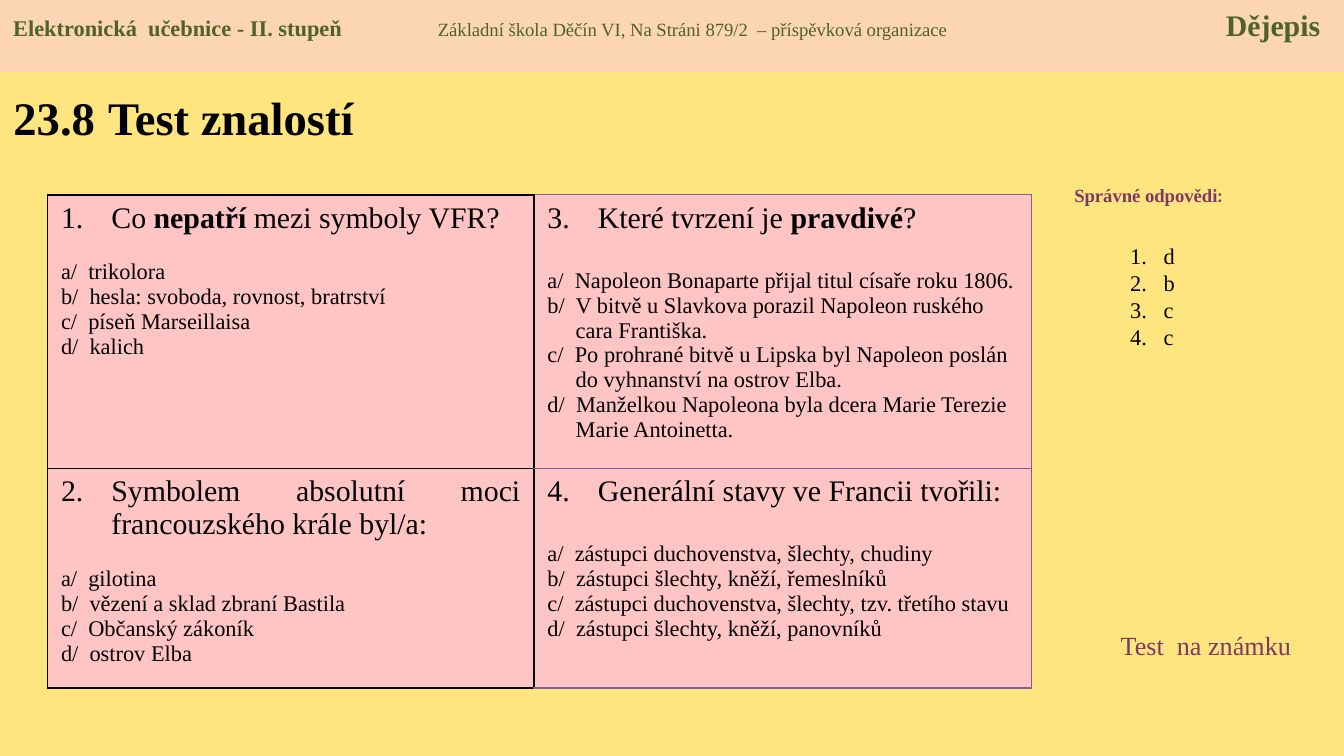
from lxml import etree
from pptx import Presentation
from pptx import util as u
from pptx.dml.color import RGBColor
from pptx.enum import shapes, text
from pptx.oxml.ns import qn

UNIT = u.Inches(0.1)
WIDE, HIGH = 100, 56.25
FACE = "Times New Roman"
BLACK = RGBColor(0, 0, 0)
CREAM = RGBColor(0xFF, 0xE5, 0x7F)
PEACH = RGBColor(0xFC, 0xD5, 0xB5)
GREEN = RGBColor(0x4F, 0x62, 0x28)
PLUM = RGBColor(0x81, 0x37, 0x63)
PINK = RGBColor(0xFF, 0xC5, 0xC5)
VIOLET = RGBColor(0x7D, 0x60, 0xA0)
ALIGN = text.PP_ALIGN

TESTS = [
    [("Co *nepatří* mezi symboly VFR?", 13.5,
      ["a/  trikolora", "b/  hesla: svoboda, rovnost, bratrství",
       "c/  píseň Marseillaisa", "d/  kalich"]),
     ("Které tvrzení je *pravdivé*?", 18,
      ["a/  Napoleon Bonaparte přijal titul císaře roku 1806.",
       "b/  V bitvě u Slavkova porazil Napoleon ruského cara Františka.",
       "c/  Po prohrané bitvě u Lipska byl Napoleon poslán do vyhnanství na ostrov Elba.",
       "d/  Manželkou Napoleona byla dcera Marie Terezie Marie Antoinetta."])],
    [("Symbolem absolutní moci francouzského krále byl/a:", 13.5,
      ["a/  gilotina", "b/  vězení a sklad zbraní Bastila",
       "c/  Občanský zákoník", "d/  ostrov Elba"]),
     ("Generální stavy ve Francii tvořili:", 18,
      ["a/  zástupci duchovenstva, šlechty, chudiny",
       "b/  zástupci šlechty, kněží, řemeslníků",
       "c/  zástupci duchovenstva, šlechty, tzv. třetího stavu",
       "d/  zástupci šlechty, kněží, panovníků"])],
]


def span(*grid):
    """Turn grid units into lengths."""
    return [u.Emu(int(n * UNIT)) for n in grid]


def style(item, **form):
    """Set each attribute of an object from format values."""
    for key, val in form.items():
        setattr(item, key, val)


def write(para, words, size, color=BLACK, bold=False, face=FACE):
    """Add a run with its font."""
    run = para.add_run()
    run.text = words
    style(run.font, size=u.Pt(size), bold=bold, name=face)
    run.font.color.rgb = color


def hang(para, depth):
    """Give a paragraph a hanging indent in grid units."""
    wide = span(depth)[0]
    props = para._p.get_or_add_pPr()
    props.set("marL", str(wide))
    props.set("indent", str(-wide))
    return props


def number(para, depth, start=1):
    """Number a paragraph automatically."""
    mark = etree.SubElement(hang(para, depth), qn("a:buAutoNum"), type="arabicPeriod")
    if start > 1:
        mark.set("startAt", str(start))


def lines(frame, count):
    """Return the given count of paragraphs of a text frame."""
    return [frame.paragraphs[0]] + [frame.add_paragraph() for _ in range(count - 1)]


def label(slide, box):
    """Add a wrapping text box and return its frame."""
    frame = slide.shapes.add_textbox(*span(*box)).text_frame
    frame.word_wrap = True
    return frame


def banner(slide, box):
    """Draw the header band with three tabbed parts."""
    band = slide.shapes.add_shape(shapes.MSO_SHAPE.RECTANGLE, *span(*box))
    band.shadow.inherit = False
    band.fill.solid()
    band.fill.fore_color.rgb = PEACH
    band.line.fill.background()
    band.text_frame.vertical_anchor = text.MSO_ANCHOR.TOP
    para = band.text_frame.paragraphs[0]
    para.alignment = ALIGN.LEFT
    tabs = etree.SubElement(para._p.get_or_add_pPr(), qn("a:tabLst"))
    for stop, side in ((31.6, "l"), (box[2] - 2.75, "r")):
        etree.SubElement(tabs, qn("a:tab"), pos=str(span(stop)[0]), algn=side)
    write(para, "Elektronická  učebnice - II. stupeň\t", 12, GREEN, True)
    write(para, "Základní škola Děčín VI, Na Stráni 879/2  – příspěvková organizace\t", 10, GREEN)
    write(para, "Dějepis", 16, GREEN, True)


def heading(slide, box):
    """Place and format the title."""
    title = slide.shapes.title
    style(title, **dict(zip(("left", "top", "width", "height"), span(*box))))
    style(title.text_frame, vertical_anchor=text.MSO_ANCHOR.MIDDLE, word_wrap=True)
    para = title.text_frame.paragraphs[0]
    para.alignment = ALIGN.LEFT
    for words, size in (("23.8", 25), (" ", 28), ("Test znalostí", 25)):
        write(para, words, size, bold=True)


def edge(cell, side, color, width):
    """Draw one border of a cell."""
    line = etree.SubElement(cell._tc.get_or_add_tcPr(), qn("a:" + side), w=str(u.Pt(width)))
    fill = etree.SubElement(line, qn("a:solidFill"))
    etree.SubElement(fill, qn("a:srgbClr"), val=str(color))


def question(cell, test, order):
    """Fill one cell with a numbered question and its options."""
    ask, gap, picks = test
    first, *rest = lines(cell.text_frame, len(picks) + 1)
    number(first, 3.75, order)
    first.alignment = ALIGN.JUSTIFY
    for pos, part in enumerate(ask.split("*")):
        write(first, part, 16, bold=pos % 2 == 1)
    for para, pick in zip(rest, picks):
        hang(para, 2.1)
        para.alignment = ALIGN.LEFT
        write(para, pick, 12)
    rest[0].space_before = u.Pt(gap)


def quiz(slide, box):
    """Build the table of four questions."""
    table = slide.shapes.add_table(2, 2, *span(*box)).table
    style(table, first_row=False, horz_banding=False)
    for col, wide in zip(table.columns, span(36.2, box[2] - 36.2)):
        col.width = wide
    for row, high in zip(table.rows, span(20.35, box[3] - 20.35)):
        row.height = high
    for r, row in enumerate(TESTS):
        for c, test in enumerate(row):
            cell = table.cell(r, c)
            for side in ("lnL", "lnR", "lnT", "lnB"):
                dark = c == 0 or side == "lnL"
                edge(cell, side, BLACK if dark else VIOLET, 1 if dark else 0.75)
            cell.fill.solid()
            cell.fill.fore_color.rgb = PINK
            question(cell, test, 1 + r + 2 * c)


def key(slide, box):
    """Place the answer heading, the answers and the closing note."""
    x, y, wide, high = box
    para = label(slide, (x, y, wide, 2.7)).paragraphs[0]
    para.alignment = ALIGN.CENTER
    write(para, "Správné odpovědi", 10, PLUM, True)
    write(para, ":", 10, PLUM, True, "Calibri")
    marks = "dbcc"
    for para, mark in zip(lines(label(slide, (x + 5.5, y + 4.3, 5.5, 11.1)), len(marks)), marks):
        number(para, 2.5)
        para.line_spacing = u.Pt(14.5)
        write(para, mark, 12)
    note = label(slide, (x + 4.8, y + high - 3.4, wide, 3.4))
    write(note.paragraphs[0], "Test  na známku", 14, PLUM)


def main():
    """Build and save the slide."""
    deck = Presentation()
    deck.slide_width, deck.slide_height = span(WIDE, HIGH)
    slide = deck.slides.add_slide(deck.slide_layouts[5])
    slide.background.fill.solid()
    slide.background.fill.fore_color.rgb = CREAM
    heading(slide, (0, 5.3, 36.2, 6.5))
    quiz(slide, (3.54, 14.5, 73.2, 36.7))
    key(slide, (77.6, 13.2, 15.7, 36.55))
    banner(slide, (0, 0, WIDE, 5.4))
    deck.save("out.pptx")


if __name__ == "__main__":
    main()
